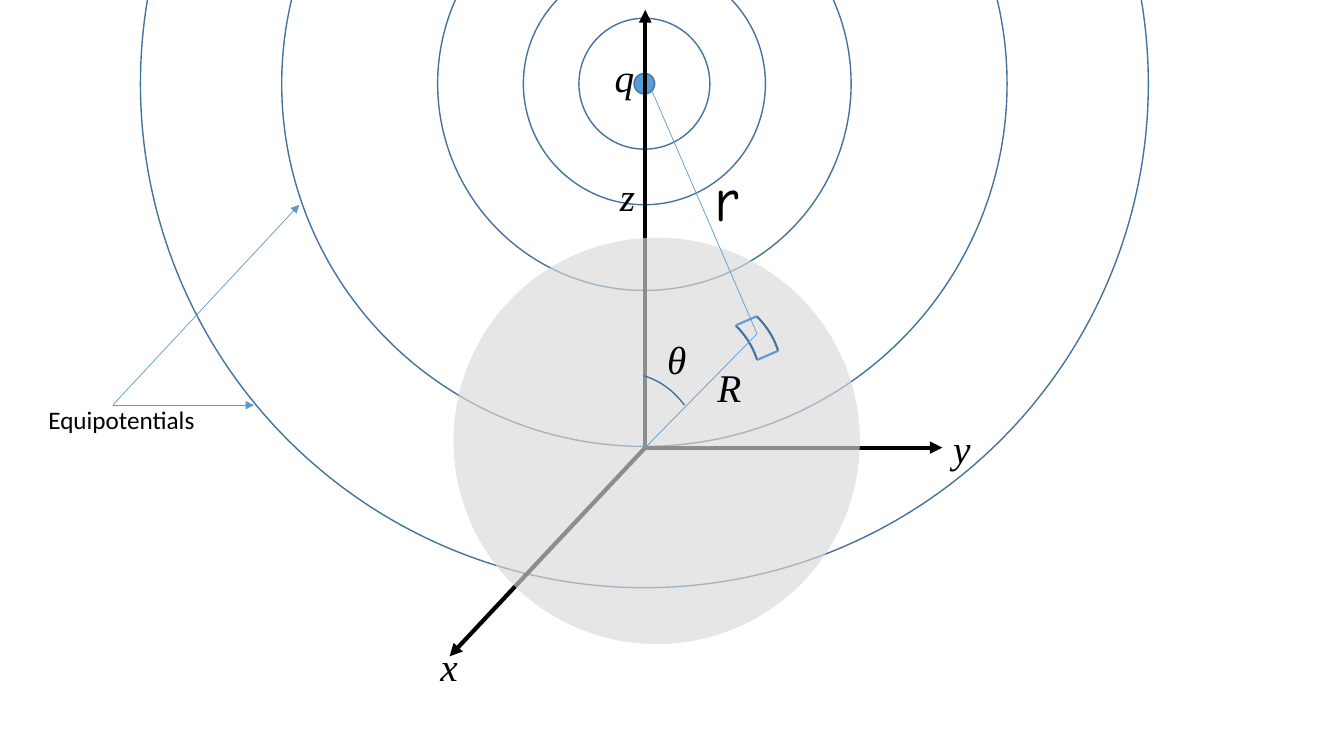
import pptx
import pptx.util
import pptx.dml.color
import pptx.enum.shapes
import pptx.enum.text
import pptx.oxml.ns
import pptx.oxml.xmlchemy
from pptx.util import Cm

BLACK = pptx.dml.color.RGBColor(0x00, 0x00, 0x00)
BLUE = pptx.dml.color.RGBColor(0x5B, 0x9B, 0xD5)
DARK_BLUE = pptx.dml.color.RGBColor(0x43, 0x73, 0x9E)
GREY = pptx.dml.color.RGBColor(0xD9, 0xD9, 0xD9)
OVAL = pptx.enum.shapes.MSO_SHAPE.OVAL
STRAIGHT = pptx.enum.shapes.MSO_CONNECTOR.STRAIGHT

presentation = pptx.Presentation()
presentation.slide_width = Cm(33.87)
presentation.slide_height = Cm(19.05)
slide = presentation.slides.add_slide(presentation.slide_layouts[6])
shapes = slide.shapes


def add_line(start, end, color, width, arrow=False):
    line = shapes.add_connector(STRAIGHT, Cm(start[0]), Cm(start[1]), Cm(end[0]), Cm(end[1]))
    line.line.color.rgb = color
    line.line.width = pptx.util.Pt(width)
    properties = line._element.spPr
    if arrow:
        tail = pptx.oxml.xmlchemy.OxmlElement("a:tailEnd")
        tail.set("type", "triangle")
        properties.find(pptx.oxml.ns.qn("a:ln")).append(tail)
    properties.append(pptx.oxml.xmlchemy.OxmlElement("a:effectLst"))


def add_label(text, left, top, width, height=1.45, size=28, font="Times New Roman", italic=True):
    box = shapes.add_textbox(Cm(left), Cm(top), Cm(width), Cm(height))
    box.text_frame.word_wrap = False
    box.text_frame.auto_size = pptx.enum.text.MSO_AUTO_SIZE.SHAPE_TO_FIT_TEXT
    paragraph = box.text_frame.paragraphs[0]
    paragraph.text = text
    paragraph.font.name = font
    paragraph.font.size = pptx.util.Pt(size)
    paragraph.font.italic = italic
    paragraph.font.color.rgb = BLACK


charge_x, charge_y = 16.24, 2.11
charge_radius = 0.26
for radius in (charge_radius, 1.65, 3.05, 5.21, 9.14, 12.7):
    circle = shapes.add_shape(
        OVAL, Cm(charge_x - radius), Cm(charge_y - radius), Cm(2 * radius), Cm(2 * radius))
    circle.shadow.inherit = False
    circle.line.color.rgb = DARK_BLUE
    circle.line.width = pptx.util.Pt(1)
    if radius == charge_radius:
        circle.fill.solid()
        circle.fill.fore_color.rgb = BLUE
    else:
        circle.fill.background()

origin = (16.26, 11.28)
for axis_end in ((16.26, 0.25), (11.33, 16.54), (23.75, 11.28)):
    add_line(origin, axis_end, BLACK, 3, arrow=True)

for text, left, top, width in (
        ("q", 15.24, 1.22, 1.02),
        ("x", 10.85, 16.05, 0.97),
        ("y", 23.77, 10.57, 0.97),
        ("z", 15.37, 4.22, 0.89)):
    add_label(text, left, top, width)

sphere = shapes.add_shape(OVAL, Cm(11.43), Cm(5.99), Cm(10.24), Cm(10.24))
sphere.shadow.inherit = False
sphere.line.fill.background()
sphere.fill.solid()
sphere.fill.fore_color.rgb = GREY
alpha = pptx.oxml.xmlchemy.OxmlElement("a:alpha")
alpha.set("val", "65000")
sphere._element.spPr.find(".//" + pptx.oxml.ns.qn("a:srgbClr")).append(alpha)

inner_arc = ((18.54, 8.2), (18.93, 8.59), (19.08, 9.07))
outer_arc = [(x + 0.53, y - 0.23) for x, y in inner_arc]
angle_arc = ((16.23, 9.47), (16.84, 9.66), (17.25, 10.21))
steps = 16
for arc, width in ((inner_arc, 1.5), (outer_arc, 1.5), (angle_arc, 1)):
    points = []
    for step in range(steps + 1):
        t = step / steps
        points.append([
            Cm((1 - t) ** 2 * start + 2 * t * (1 - t) * bend + t ** 2 * end)
            for start, bend, end in zip(*arc)])
    builder = shapes.build_freeform(*points[0])
    builder.add_line_segments(points[1:], close=False)
    curve = builder.convert_to_shape()
    curve.shadow.inherit = False
    curve.fill.background()
    curve.line.color.rgb = DARK_BLUE
    curve.line.width = pptx.util.Pt(width)

for inner_corner, outer_corner in ((inner_arc[0], outer_arc[0]), (inner_arc[2], outer_arc[2])):
    add_line(inner_corner, outer_corner, BLUE, 1.5)

patch_center = (19.08, 8.41)
for radius_start in ((16.43, 2.29), origin):
    add_line(radius_start, patch_center, BLUE, 0.5)

add_label("r", 17.75, 3.91, 1.09, height=2.13, size=44, font="Comic Neue", italic=False)
add_label("R", 17.83, 9.04, 1.12)
add_label("θ", 16.56, 8.33, 1.04)

for equipotential_point in ((7.54, 5.16), (6.4, 10.21)):
    add_line((2.84, 10.21), equipotential_point, BLUE, 0.5, arrow=True)
add_label("Equipotentials", 0.97, 10.06, 4.24, height=1.02, size=18, font="Calibri", italic=False)

presentation.save("out.pptx")
